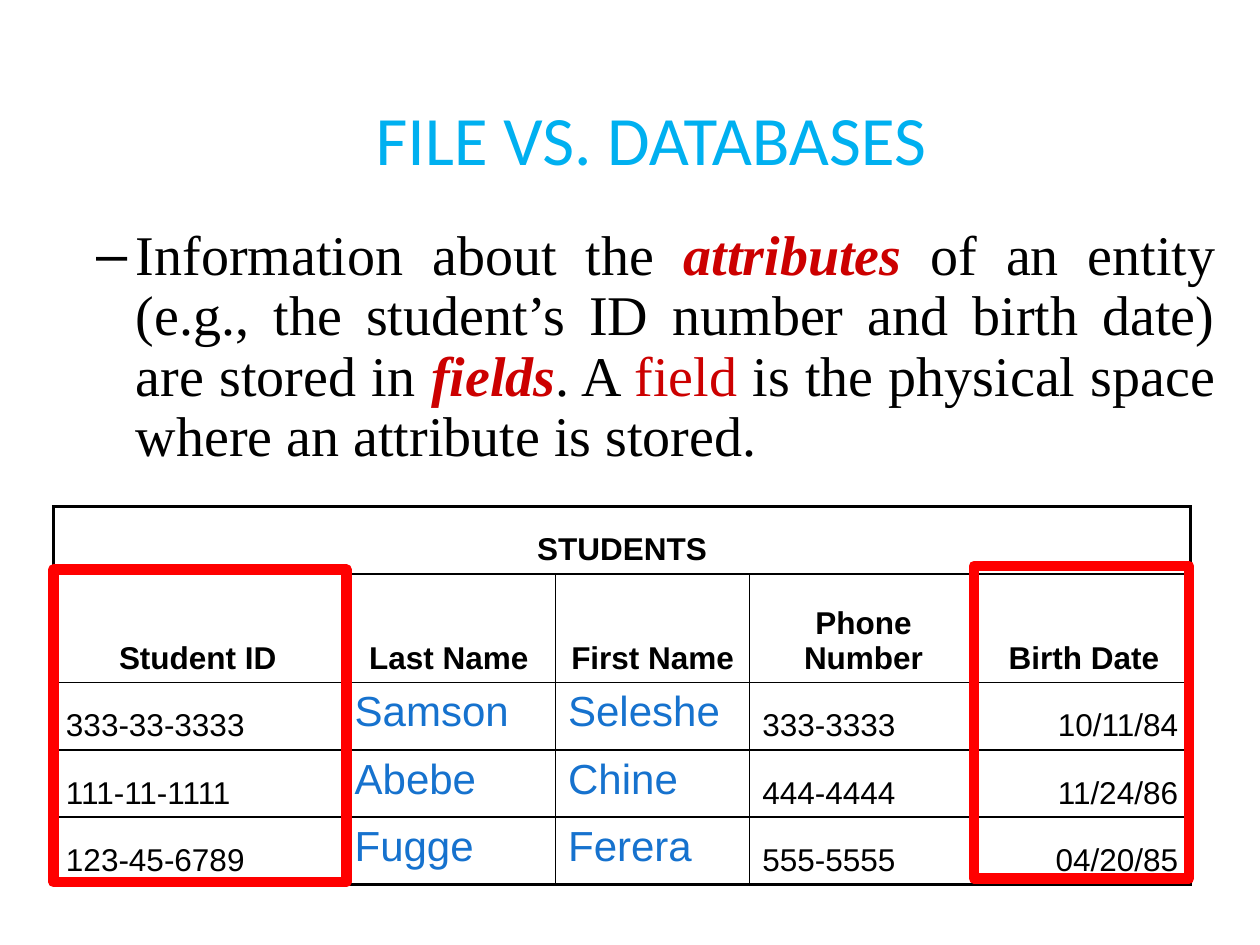
import pptx
import pptx.dml.color
import pptx.enum.shapes
import pptx.enum.text
import pptx.oxml
import pptx.oxml.ns
import pptx.util

Pt = pptx.util.Pt
ALIGN = pptx.enum.text.PP_ALIGN
ANCHOR = pptx.enum.text.MSO_ANCHOR
BLACK, RED, CRIMSON, SKY, BLUE = "000000", "FF0000", "CC0000", "00B0F0", "1672CE"

DEFINITION = [
    ("Information about the ", BLACK, False),
    ("attributes", CRIMSON, True),
    (" of an entity (e.g., the student’s ID number and birth date) are stored in ", BLACK, False),
    ("fields", CRIMSON, True),
    (". A ", BLACK, False),
    ("field", CRIMSON, False),
    (" is the physical space where an attribute is stored.", BLACK, False),
]
STUDENTS = [
    ["STUDENTS", "", "", "", ""],
    ["Student ID", "Last Name", "First Name", "Phone Number", "Birth Date"],
    ["333-33-3333", "Samson", "Seleshe", "333-3333", "10/11/84"],
    ["111-11-1111", "Abebe", "Chine", "444-4444", "11/24/86"],
    ["123-45-6789", "Fugge", "Ferera", "555-5555", "04/20/85"],
]
COLUMN_WIDTHS = [165, 122, 111, 130, 122]
ROW_HEIGHTS = [38.5, 62, 38.5, 38.5, 38.5]
HEADER_ROWS = 2
NAME_COLUMNS = (1, 2)


def rgb(color):
    """Turn a hex string into a colour."""
    return pptx.dml.color.RGBColor.from_string(color)


def place(shape, left, top, width, height):
    """Move and size a shape, in points."""
    shape.left, shape.top = Pt(left), Pt(top)
    shape.width, shape.height = Pt(width), Pt(height)


def set_font(font, name, size, color, bold=False):
    """Format a font."""
    font.name, font.size, font.bold = name, Pt(size), bold
    font.color.rgb = rgb(color)


def xml(markup):
    """Parse one DrawingML element."""
    tag, rest = markup.split(" ", 1)
    return pptx.oxml.parse_xml(f"{tag} {pptx.oxml.ns.nsdecls('a')} {rest}")


def add_title(slide, wording):
    """Fill the title placeholder."""
    title = slide.shapes.title
    place(title, 48, 55.5, 648, 47)
    title.text_frame.vertical_anchor = ANCHOR.MIDDLE
    heading = title.text_frame.paragraphs[0]
    heading.text = wording
    heading.alignment = ALIGN.CENTER
    set_font(heading.font, "Calibri", 39.6, SKY)


def add_definition(slide, pieces):
    """Fill the body placeholder with one second-level bullet."""
    body = slide.placeholders[1]
    place(body, 12, 126, 690, 144)
    bullet = body.text_frame.paragraphs[0]
    bullet.level = 1
    bullet.alignment = ALIGN.JUSTIFY
    bullet.line_spacing = 0.9
    properties = bullet._p.get_or_add_pPr()
    properties.set("marL", str(Pt(58.5)))
    properties.set("indent", str(Pt(-22.5)))
    for wording, color, emphasis in pieces:
        run = bullet.add_run()
        run.text = wording
        set_font(run.font, "Times New Roman", 32, color, emphasis)
        run.font.italic = emphasis


def set_borders(cell, widths):
    """Draw the left, right, top and bottom borders of a cell."""
    properties = cell._tc.get_or_add_tcPr()
    for index, (side, width) in enumerate(zip("LRTB", widths)):
        properties.insert(index, xml(
            f'<a:ln{side} w="{Pt(width)}"><a:solidFill><a:srgbClr val="{BLACK}"/>'
            f'</a:solidFill></a:ln{side}>'))


def fill_cell(cell, wording, row, column):
    """Write and format a cell by its place in the table."""
    cell.fill.background()
    header = row < HEADER_ROWS
    is_name = column in NAME_COLUMNS and not header
    cell.vertical_anchor = ANCHOR.TOP if is_name else ANCHOR.BOTTOM
    entry = cell.text_frame.paragraphs[0]
    entry.text = wording
    if header:
        entry.alignment = ALIGN.CENTER
    elif column == len(COLUMN_WIDTHS) - 1:
        entry.alignment = ALIGN.RIGHT
    else:
        entry.alignment = ALIGN.LEFT
    if is_name:
        set_font(entry.font, "Arial", 24, BLUE)
        entry._p.get_or_add_pPr().insert(
            0, xml('<a:spcBef ><a:spcPct val="20000"/></a:spcBef>'))
    else:
        set_font(entry.font, "Arial", 18, BLACK, header)


def add_students(slide):
    """Add the table of students with a heavier outer frame."""
    last_row, last_column = len(ROW_HEIGHTS) - 1, len(COLUMN_WIDTHS) - 1
    students = slide.shapes.add_table(
        last_row + 1, last_column + 1, Pt(30.5), Pt(289.5),
        Pt(sum(COLUMN_WIDTHS)), Pt(sum(ROW_HEIGHTS))).table
    students.first_row = students.horz_banding = False
    for column, width in zip(students.columns, COLUMN_WIDTHS):
        column.width = Pt(width)
    for row, height in zip(students.rows, ROW_HEIGHTS):
        row.height = Pt(height)
    students.cell(0, 0).merge(students.cell(0, last_column))
    for r, record in enumerate(STUDENTS):
        for c, wording in enumerate(record):
            cell = students.cell(r, c)
            fill_cell(cell, wording, r, c)
            left = r == 0 or c == 0
            right = r == 0 or c == last_column
            outer = (left, right, r == 0, r == last_row)
            set_borders(cell, [2 if edge else 1 for edge in outer])


def add_highlight(slide, left, top, width, height):
    """Frame a table column in red."""
    frame = slide.shapes.add_shape(
        pptx.enum.shapes.MSO_SHAPE.RECTANGLE, Pt(left), Pt(top), Pt(width), Pt(height))
    frame.shadow.inherit = False
    frame.fill.background()
    frame.line.color.rgb = rgb(RED)
    frame.line.width = Pt(6)


def main():
    """Build the slide and save it."""
    deck = pptx.Presentation()
    deck.slide_width, deck.slide_height = Pt(720), Pt(540)
    slide = deck.slides.add_slide(deck.slide_layouts[1])
    add_title(slide, "FILE VS. DATABASES")
    add_definition(slide, DEFINITION)
    add_students(slide)
    add_highlight(slide, 30.5, 325.5, 167.5, 178.5)
    add_highlight(slide, 556.5, 323.5, 123, 178.5)
    deck.save("out.pptx")


if __name__ == "__main__":
    main()
